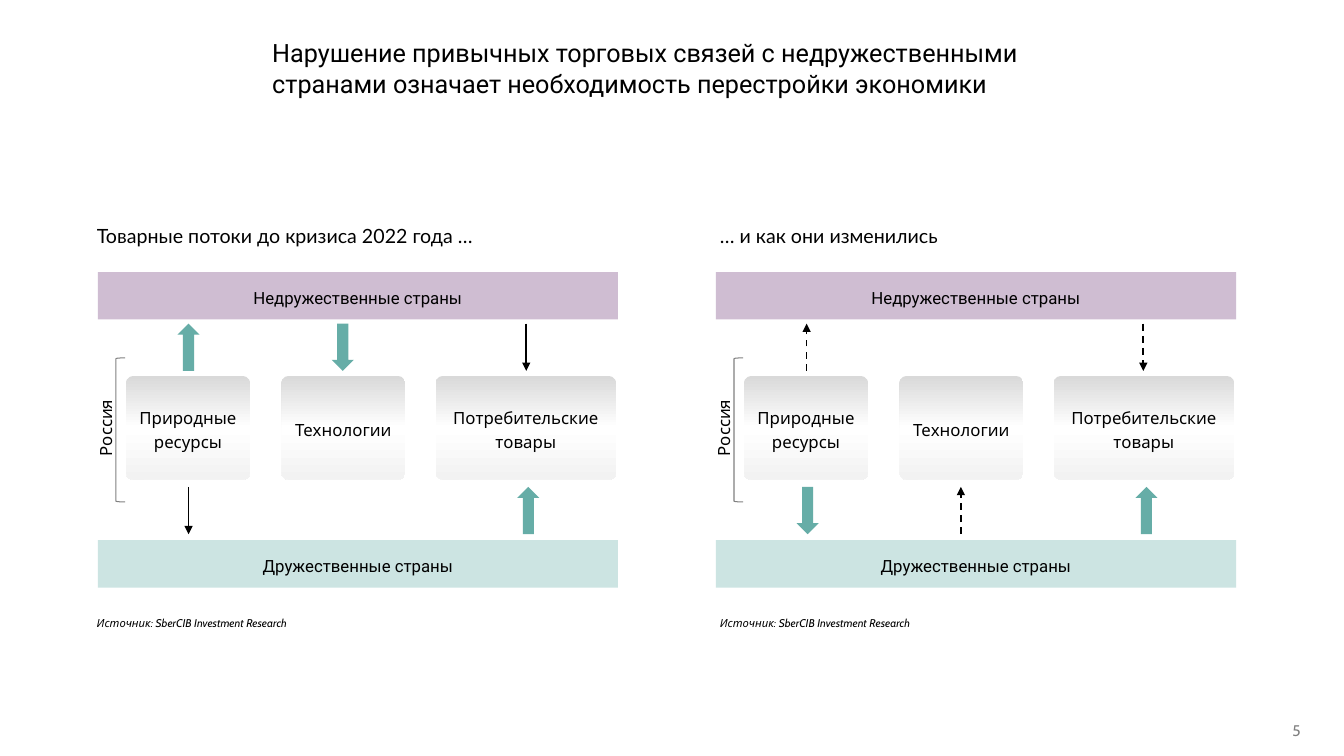
"""Build a slide comparing trade flows before and after the 2022 crisis."""
from copy import deepcopy
from dataclasses import dataclass

from pptx import Presentation
from pptx.dml.color import RGBColor
from pptx.enum.dml import MSO_LINE
from pptx.enum.shapes import MSO_CONNECTOR, MSO_SHAPE
from pptx.enum.text import MSO_ANCHOR, MSO_AUTO_SIZE, PP_ALIGN
from pptx.oxml.ns import qn
from pptx.shapes.autoshape import Shape
from pptx.slide import Slide
from pptx.util import Inches, Pt
from lxml import etree

BLACK = RGBColor(0x00, 0x00, 0x00)
WHITE = RGBColor(0xFF, 0xFF, 0xFF)
GREY = RGBColor(0x80, 0x80, 0x80)
MAUVE = RGBColor(0xCF, 0xBD, 0xD2)
MINT = RGBColor(0xCC, 0xE4, 0xE2)
TEAL = RGBColor(0x66, 0xAD, 0xA7)
SECTOR_GRADIENT = (
    (0, RGBColor(0xD9, 0xD9, 0xD9)),
    (0.5, WHITE),
    (1, RGBColor(0xF2, 0xF2, 0xF2)),
)

LEFT, CENTER, RIGHT = PP_ALIGN.LEFT, PP_ALIGN.CENTER, PP_ALIGN.RIGHT
TOP, MIDDLE = MSO_ANCHOR.TOP, MSO_ANCHOR.MIDDLE
NO_AUTOSIZE = MSO_AUTO_SIZE.NONE
RECTANGLE, ROUNDED = MSO_SHAPE.RECTANGLE, MSO_SHAPE.ROUNDED_RECTANGLE
DOWN_ARROW, RIGHT_BRACKET = MSO_SHAPE.DOWN_ARROW, MSO_SHAPE.RIGHT_BRACKET
STRAIGHT, DASH = MSO_CONNECTOR.STRAIGHT, MSO_LINE.DASH

BLOCK, SOLID, DASHED = "block", "solid", "dashed"
UPPER_ROW, LOWER_ROW = 3.21, 4.83
FLOW_HEIGHT, BLOCK_WIDTH = 0.47, 0.22
LINE_PITCH = Pt(17)
SOURCE = "Источник: SberCIB Investment Research"


@dataclass(frozen=True)
class TextStyle:
    font: str
    size: float
    color: RGBColor = BLACK
    align: PP_ALIGN = LEFT
    spacing: float | Pt | None = LINE_PITCH
    anchor: MSO_ANCHOR = TOP
    italic: bool = False


@dataclass(frozen=True)
class Bar:
    label: str
    top: float
    color: RGBColor


@dataclass(frozen=True)
class Sector:
    label: str
    left: float
    width: float


@dataclass(frozen=True)
class Flow:
    center: float
    top: float
    upward: bool
    kind: str


@dataclass(frozen=True)
class Panel:
    left: float
    caption_left: float
    caption: str
    flows: tuple[Flow, ...]


TITLE = TextStyle("Roboto", 18, spacing=None, anchor=MIDDLE)
CAPTION = TextStyle("Lato", 14)
BAR_LABEL = TextStyle("Roboto", 12, align=CENTER, anchor=MIDDLE)
SECTOR_LABEL = TextStyle("Cabin", 12, align=CENTER, anchor=MIDDLE)
COUNTRY_LABEL = TextStyle("Cabin", 12, align=CENTER)
SOURCE_NOTE = TextStyle("Cabin", 8, spacing=0.9, italic=True)
PAGE_NUMBER = TextStyle("Cabin", 11, GREY, RIGHT, None, MIDDLE)

BARS = (
    Bar("Недружественные страны", 2.7, MAUVE),
    Bar("Дружественные страны", 5.36, MINT),
)
SECTORS = (
    Sector("Природные\nресурсы", 0.28, 1.23),
    Sector("Технологии", 1.82, 1.23),
    Sector("Потребительские\nтовары", 3.35, 1.79),
)
PANELS = (
    Panel(0.97, 0.96, "Товарные потоки до кризиса 2022 года …", (
        Flow(0.9, UPPER_ROW, True, BLOCK),
        Flow(2.43, UPPER_ROW, False, BLOCK),
        Flow(4.25, UPPER_ROW, False, SOLID),
        Flow(0.9, LOWER_ROW, False, SOLID),
        Flow(4.27, LOWER_ROW, True, BLOCK),
    )),
    Panel(7.1, 7.14, "… и как они изменились", (
        Flow(0.9, UPPER_ROW, True, DASHED),
        Flow(4.24, UPPER_ROW, False, DASHED),
        Flow(0.91, LOWER_ROW, False, BLOCK),
        Flow(2.43, LOWER_ROW, True, DASHED),
        Flow(4.27, LOWER_ROW, True, BLOCK),
    )),
)


def write_text(shape: Shape, text: str, style: TextStyle, inset: float = 0) -> None:
    frame = shape.text_frame
    frame.text = text
    frame.word_wrap = True
    frame.auto_size = NO_AUTOSIZE
    frame.vertical_anchor = style.anchor
    frame.margin_left = frame.margin_right = Inches(inset)
    frame.margin_top = frame.margin_bottom = Inches(0)
    for paragraph in frame.paragraphs:
        paragraph.alignment = style.align
        paragraph.line_spacing = style.spacing
        font = paragraph.font
        font.name, font.size, font.italic = style.font, Pt(style.size), style.italic
        font.color.rgb = style.color


def add_text(slide: Slide, text: str, style: TextStyle, left: float, top: float,
             width: float, height: float, inset: float = 0) -> Shape:
    box = slide.shapes.add_textbox(Inches(left), Inches(top), Inches(width), Inches(height))
    write_text(box, text, style, inset)
    return box


def add_filled(slide: Slide, kind: MSO_SHAPE, color: RGBColor, left: float, top: float,
               width: float, height: float) -> Shape:
    shape = slide.shapes.add_shape(kind, Inches(left), Inches(top), Inches(width), Inches(height))
    shape.shadow.inherit = False
    shape.fill.solid()
    shape.fill.fore_color.rgb = color
    shape.line.fill.background()
    return shape


def add_sector(slide: Slide, sector: Sector, panel_left: float) -> None:
    shape = add_filled(slide, ROUNDED, WHITE, panel_left + sector.left, 3.73, sector.width, 1.03)
    shape.adjustments[0] = 0.07
    shape.fill.gradient()
    shape.fill.gradient_angle = 270
    stop_list = shape._element.spPr.find(".//" + qn("a:gsLst"))
    stop_list.append(deepcopy(stop_list[0]))
    for stop, (position, color) in zip(shape.fill.gradient_stops, SECTOR_GRADIENT):
        stop.position = position
        stop.color.rgb = color
    write_text(shape, sector.label, SECTOR_LABEL)


def add_flow(slide: Slide, flow: Flow, panel_left: float) -> None:
    center = panel_left + flow.center
    if flow.kind == BLOCK:
        arrow = add_filled(slide, DOWN_ARROW, TEAL, center - BLOCK_WIDTH / 2, flow.top,
                           BLOCK_WIDTH, FLOW_HEIGHT)
        arrow.rotation = 180 if flow.upward else 0
        return
    start, end = flow.top, flow.top + FLOW_HEIGHT
    if flow.upward:
        start, end = end, start
    connector = slide.shapes.add_connector(
        STRAIGHT, Inches(center), Inches(start), Inches(center), Inches(end))
    connector.line.color.rgb = BLACK
    connector.line.width = Pt(1.25)
    if flow.kind == DASHED:
        connector.line.dash_style = DASH
    properties = connector._element.spPr
    etree.SubElement(properties.find(qn("a:ln")), qn("a:tailEnd"), type="triangle")
    etree.SubElement(properties, qn("a:effectLst"))


def add_panel(slide: Slide, panel: Panel) -> None:
    add_text(slide, panel.caption, CAPTION, panel.caption_left, 2.22, 4.68, 0.24)
    add_text(slide, SOURCE, SOURCE_NOTE, panel.caption_left, 6.13, 5.5, 0.12)
    for bar in BARS:
        shape = add_filled(slide, RECTANGLE, bar.color, panel.left, bar.top, 5.16, 0.47)
        write_text(shape, bar.label, BAR_LABEL)
    for sector in SECTORS:
        add_sector(slide, sector, panel.left)
    for flow in panel.flows:
        add_flow(slide, flow, panel.left)
    bracket = add_filled(slide, RIGHT_BRACKET, WHITE, panel.left + 0.18, 3.55, 0.09, 1.43)
    bracket.rotation = 180
    bracket.line.color.rgb = GREY
    bracket.line.width = Pt(0.75)
    country = add_text(slide, "Россия", COUNTRY_LABEL, panel.left - 0.56, 4.13, 1.23, 0.23)
    country.rotation = 270


def main() -> None:
    presentation = Presentation()
    presentation.slide_width, presentation.slide_height = Inches(13.33), Inches(7.5)
    slide = presentation.slides.add_slide(presentation.slide_layouts[5])
    title = slide.shapes.title
    title.left, title.top = Inches(2.7), Inches(0.5)
    title.width, title.height = Inches(8.43), Inches(0.35)
    write_text(title, "Нарушение привычных торговых связей с недружественными странами "
               "означает необходимость перестройки экономики", TITLE)
    for panel in PANELS:
        add_panel(slide, panel)
    add_text(slide, "5", PAGE_NUMBER, 11.66, 7.05, 1.34, 0.4, inset=0.1)
    presentation.save("out.pptx")


if __name__ == "__main__":
    main()
